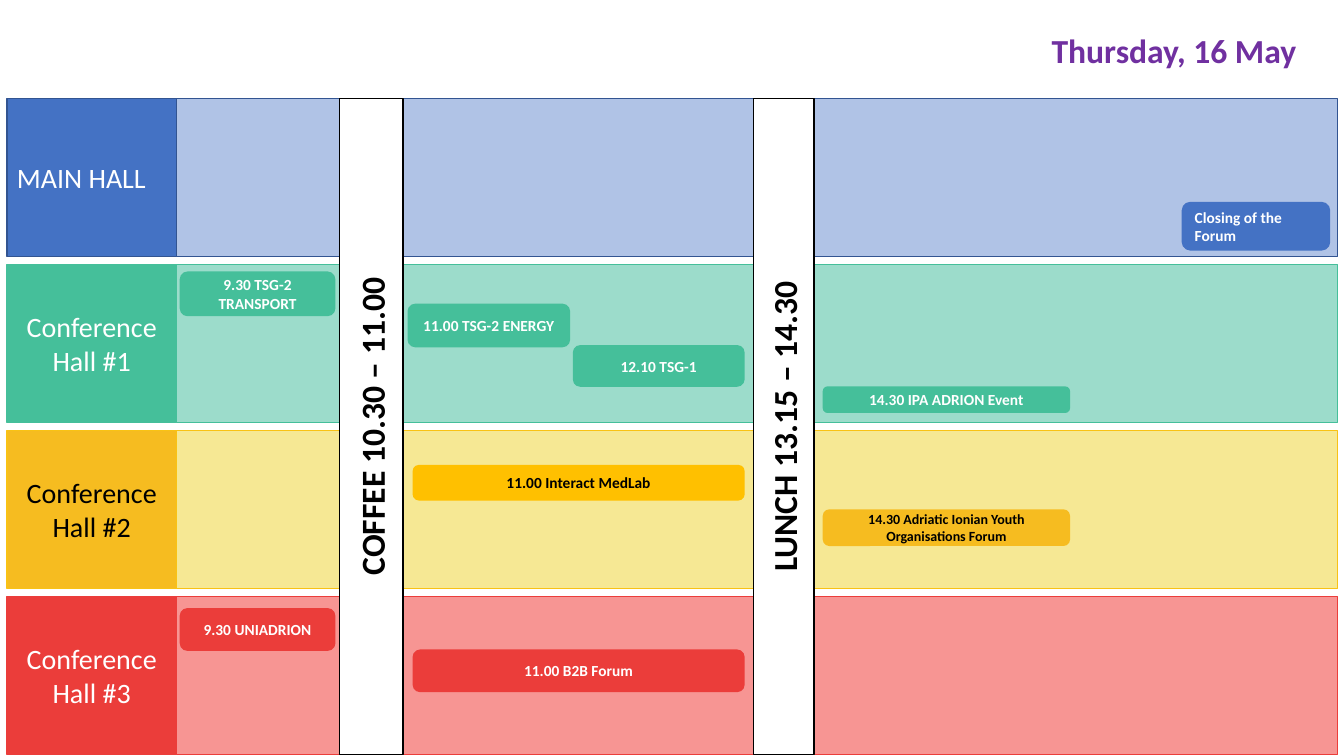
from pptx import Presentation
from pptx.dml.color import RGBColor
from pptx.enum import shapes, text
from pptx.util import Pt

TITLE = "Thursday, 16 May"

# Sessions: text, left, offset from the top of the hall, width, height, format changes
HALLS = [
    {"name": "MAIN HALL", "colors": "blue", "align": "left", "sessions": [
        ("Closing of the Forum", 844.6, 74.3, 105.1, 33.8, {"align": "left"}),
    ]},
    {"name": "Conference Hall #1", "colors": "green", "align": "center", "sessions": [
        ("9.30 TSG-2 TRANSPORT", 128.9, 5.5, 110.2, 31, {}),
        ("11.00 TSG-2 ENERGY", 291.6, 28.5, 115.2, 30.2, {}),
        ("12.10 TSG-1", 409.7, 58.1, 121.7, 28.8, {}),
        ("14.30 IPA ADRION Event", 588.2, 87.6, 175.7, 18, {}),
    ]},
    {"name": "Conference Hall #2", "colors": "yellow", "align": "center", "sessions": [
        ("11.00 Interact MedLab", 295.2, 25.2, 236.2, 24.5, {"fill": "FFC000"}),
        ("14.30 Adriatic Ionian Youth Organisations Forum",
         588.2, 56.9, 175.7, 25.2, {"size": 10}),
    ]},
    {"name": "Conference Hall #3", "colors": "red", "align": "center", "sessions": [
        ("9.30 UNIADRION", 128.9, 9, 110.2, 29.5, {}),
        ("11.00 B2B Forum", 295.2, 38.5, 236.2, 29.5, {}),
    ]},
]

# Breaks: text, left, width
BREAKS = [("COFFEE 10.30 – 11.00", 242.6, 45.4), ("LUNCH 13.15 – 14.30", 538.2, 43.2)]

THEME = {
    "font": "Calibri",
    "title": "7030A0", "black": "000000", "white": "FFFFFF",
    "title_size": 24, "break_size": 24, "hall_size": 20, "session_size": 11,
    "blue": {"main": "4472C4", "band": "B0C3E6", "line": "325491", "text": "FFFFFF"},
    "green": {"main": "45BF9A", "band": "9CDCCB", "line": "45BF9A", "text": "FFFFFF"},
    "yellow": {"main": "F6BC20", "band": "F6E894", "line": "F9C214", "text": "000000"},
    "red": {"main": "EB3D3A", "band": "F79593", "line": "EB3D3A", "text": "FFFFFF"},
}
ALIGN = {"left": text.PP_ALIGN.LEFT, "center": text.PP_ALIGN.CENTER,
         "right": text.PP_ALIGN.RIGHT}

TOP, ROW_HEIGHT, ROW_STEP = 70.4, 113, 118.5
LABEL_LEFT, LABEL_WIDTH, BAND_WIDTH = 5, 121, 829.4
GRID_HEIGHT = ROW_STEP * (len(HALLS) - 1) + ROW_HEIGHT


def write(box, words, size, color, bold=False, align="center"):
    frame = box.text_frame
    frame.word_wrap = True
    frame.auto_size = text.MSO_AUTO_SIZE.NONE
    frame.vertical_anchor = text.MSO_ANCHOR.MIDDLE
    para = frame.paragraphs[0]
    para.alignment = ALIGN[align]
    span = para.add_run()
    span.text = words
    span.font.name = THEME["font"]
    span.font.size = Pt(size)
    span.font.bold = bold
    span.font.color.rgb = RGBColor.from_string(color)


def add_box(page, kind, left, top, width, height, fill, line):
    box = page.shapes.add_shape(kind, Pt(left), Pt(top), Pt(width), Pt(height))
    box.shadow.inherit = False
    box.fill.solid()
    box.fill.fore_color.rgb = RGBColor.from_string(fill)
    box.line.color.rgb = RGBColor.from_string(line)
    box.line.width = Pt(1)
    return box


def add_hall(page, hall, top):
    colors = THEME[hall["colors"]]
    rectangle = shapes.MSO_SHAPE.RECTANGLE
    label = add_box(page, rectangle, LABEL_LEFT, top, LABEL_WIDTH, ROW_HEIGHT,
                    colors["main"], colors["line"])
    write(label, hall["name"], THEME["hall_size"], colors["text"], align=hall["align"])
    add_box(page, rectangle, LABEL_LEFT + LABEL_WIDTH, top, BAND_WIDTH, ROW_HEIGHT,
            colors["band"], colors["line"])
    for words, left, offset, width, height, changes in hall["sessions"]:
        fill = changes.get("fill", colors["main"])
        session = add_box(page, shapes.MSO_SHAPE.FLOWCHART_ALTERNATE_PROCESS,
                          left, top + offset, width, height, fill, fill)
        write(session, words, changes.get("size", THEME["session_size"]), colors["text"],
              bold=True, align=changes.get("align", "center"))


def add_break(page, words, left, width):
    """Add a full-height column as a wide box turned to read upwards."""
    middle_x, middle_y = left + width / 2, TOP + GRID_HEIGHT / 2
    box = add_box(page, shapes.MSO_SHAPE.RECTANGLE, middle_x - GRID_HEIGHT / 2,
                  middle_y - width / 2, GRID_HEIGHT, width, THEME["white"], THEME["black"])
    box.rotation = 270
    write(box, words, THEME["break_size"], THEME["black"], bold=True)


def main():
    deck = Presentation()
    deck.slide_width, deck.slide_height = Pt(960), Pt(540)
    page = deck.slides.add_slide(deck.slide_layouts[5])
    title = page.shapes.title
    title.left, title.top, title.width, title.height = Pt(695.5), Pt(18), Pt(237.6), Pt(36)
    write(title, TITLE, THEME["title_size"], THEME["title"], bold=True, align="right")
    for row, hall in enumerate(HALLS):
        add_hall(page, hall, TOP + row * ROW_STEP)
    for words, left, width in BREAKS:
        add_break(page, words, left, width)
    deck.save("out.pptx")


if __name__ == "__main__":
    main()
